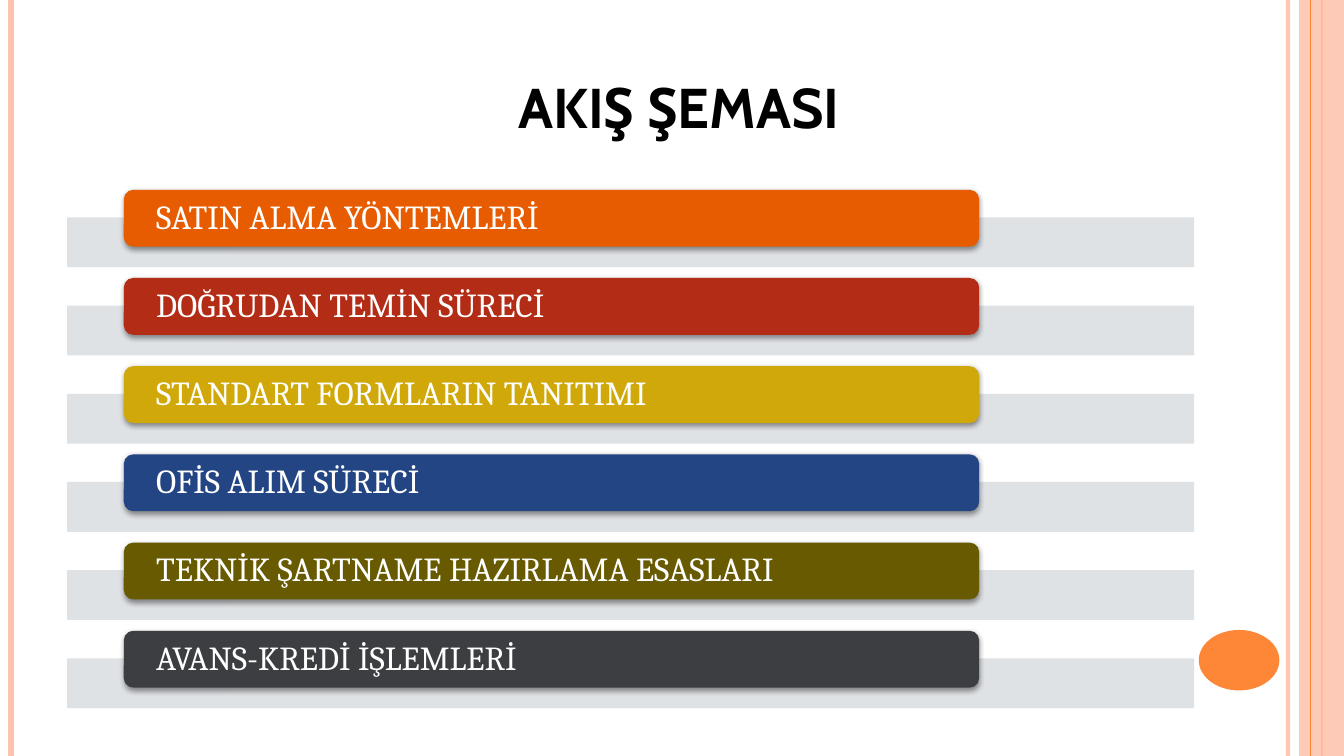
from dataclasses import dataclass

from lxml import etree
from pptx import Presentation
from pptx.dml.color import RGBColor
from pptx.enum.shapes import MSO_CONNECTOR, MSO_SHAPE
from pptx.enum.text import MSO_ANCHOR, MSO_AUTO_SIZE, PP_ALIGN
from pptx.oxml.ns import qn
from pptx.util import Pt

STRAIGHT = MSO_CONNECTOR.STRAIGHT
RECTANGLE, ROUNDED, OVAL = MSO_SHAPE.RECTANGLE, MSO_SHAPE.ROUNDED_RECTANGLE, MSO_SHAPE.OVAL
BOTTOM, MIDDLE = MSO_ANCHOR.BOTTOM, MSO_ANCHOR.MIDDLE
CENTER, LEFT = PP_ALIGN.CENTER, PP_ALIGN.LEFT
NO_AUTOFIT = MSO_AUTO_SIZE.NONE
TITLE_ONLY = 5
PAGE_WIDTH, PAGE_HEIGHT = 960, 540


@dataclass(frozen=True)
class Theme:
    background: str = "FFFFFF"
    title: str = "000000"
    label: str = "FFFFFF"
    orange: str = "FE8637"
    peach: str = "FEC3AE"
    band: str = "DCDFE3"
    shadow: str = "000000"
    title_font: str = "Cabin"
    label_font: str = "Cambria"
    title_size: int = 40
    label_size: int = 24


THEME = Theme()

STEPS = [
    ("SATIN ALMA YÖNTEMLERİ", "E75C01"),
    ("DOĞRUDAN TEMİN SÜRECİ", "B32C16"),
    ("STANDART FORMLARIN TANITIMI", "D0A80A"),
    ("OFİS ALIM SÜRECİ", "244583"),
    ("TEKNİK ŞARTNAME HAZIRLAMA ESASLARI", "675A00"),
    ("AVANS-KREDİ İŞLEMLERİ", "3C3E42"),
]
FIRST_STEP_TOP, STEP_PITCH, BAND_OFFSET = 135.6, 63, 19.7


def set_alpha(element, percent):
    """Make every RGB colour inside the element partly transparent."""
    for color in element.iter(qn("a:srgbClr")):
        etree.SubElement(color, qn("a:alpha"), val=str(percent * 1000))


def add_block(page, kind, left, top, width, height, color, opacity=100):
    block = page.shapes.add_shape(kind, Pt(left), Pt(top), Pt(width), Pt(height))
    block.shadow.inherit = False
    block.fill.solid()
    block.fill.fore_color.rgb = RGBColor.from_string(color)
    block.line.fill.background()
    if opacity < 100:
        set_alpha(block._element.spPr, opacity)
    return block


def add_stripe(page, x, color, weight, opacity=100):
    """Draw a vertical line over the full page height."""
    stripe = page.shapes.add_connector(STRAIGHT, Pt(x), 0, Pt(x), Pt(PAGE_HEIGHT))
    stripe.line.color.rgb = RGBColor.from_string(color)
    stripe.line.width = Pt(weight)
    properties = stripe._element.spPr
    if opacity < 100:
        set_alpha(properties, opacity)
    etree.SubElement(properties, qn("a:effectLst"))


def add_drop_shadow(block):
    effects = block._element.spPr.find(qn("a:effectLst"))
    shadow = etree.SubElement(
        effects, qn("a:outerShdw"), blurRad=str(Pt(4)), dist=str(Pt(1.6)),
        dir="5400000", algn="ctr", rotWithShape="0")
    etree.SubElement(shadow, qn("a:srgbClr"), val=THEME.shadow)
    set_alpha(shadow, 42)


def style_paragraph(para, font_name, size, color, alignment):
    para.alignment = alignment
    para.font.name = font_name
    para.font.size = Pt(size)
    para.font.color.rgb = RGBColor.from_string(color)


def add_frame(page):
    """Draw the decorative page edges and the round marker."""
    add_stripe(page, 920, THEME.peach, 3, 93)
    add_stripe(page, 8, THEME.peach, 4.5)
    add_stripe(page, 944, THEME.orange, 1.5)
    add_block(page, RECTANGLE, 928, 0, PAGE_WIDTH - 928, PAGE_HEIGHT, THEME.peach, 87)
    add_stripe(page, 936, THEME.orange, 0.75)
    add_block(page, OVAL, 856.3, 450, 57.6, 43.2, THEME.orange)


def set_title(page, text):
    title = page.shapes.title
    title.left, title.top, title.width, title.height = Pt(89), Pt(21.6), Pt(792), Pt(82)
    frame = title.text_frame
    frame.text = text
    frame.word_wrap = True
    frame.auto_size = NO_AUTOFIT
    frame.vertical_anchor = BOTTOM
    para = frame.paragraphs[0]
    style_paragraph(para, THEME.title_font, THEME.title_size, THEME.title, CENTER)
    para.font.bold = True


def add_step(page, top, text, color):
    """Draw one grey band with its coloured label in front."""
    add_block(page, RECTANGLE, 48, top + BAND_OFFSET, 805, 35.6, THEME.band, 90)
    label = add_block(page, ROUNDED, 88.4, top, 611, 40.6, color)
    add_drop_shadow(label)
    frame = label.text_frame
    frame.text = text
    frame.word_wrap = True
    frame.vertical_anchor = MIDDLE
    frame.margin_left = frame.margin_right = Pt(21.2)
    frame.margin_top = frame.margin_bottom = 0
    para = frame.paragraphs[0]
    style_paragraph(para, THEME.label_font, THEME.label_size, THEME.label, LEFT)
    para.line_spacing = 0.9


def main():
    deck = Presentation()
    deck.slide_width, deck.slide_height = Pt(PAGE_WIDTH), Pt(PAGE_HEIGHT)
    page = deck.slides.add_slide(deck.slide_layouts[TITLE_ONLY])
    page.background.fill.solid()
    page.background.fill.fore_color.rgb = RGBColor.from_string(THEME.background)
    add_frame(page)
    set_title(page, "AKIŞ ŞEMASI")
    for index, (text, color) in enumerate(STEPS):
        add_step(page, FIRST_STEP_TOP + index * STEP_PITCH, text, color)
    deck.save("out.pptx")


if __name__ == "__main__":
    main()
